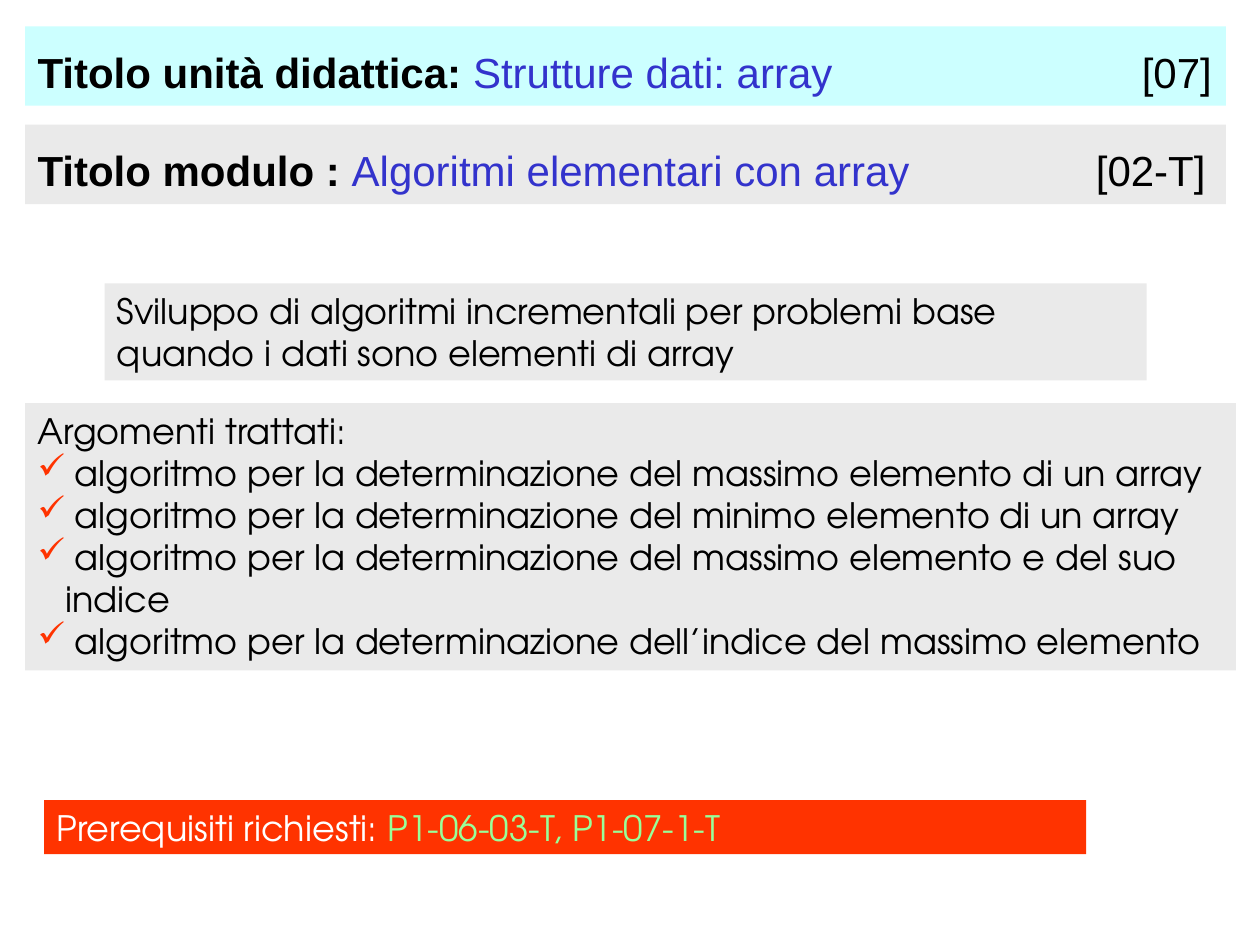
from dataclasses import dataclass

from lxml import etree
from pptx import Presentation
from pptx.dml.color import RGBColor
from pptx.enum import text
from pptx.oxml.ns import qn
from pptx.util import Inches, Pt

TITLE_FONT = "Arial"
BODY_FONT = "TeX Gyre Adventor"
BLACK, WHITE, BLUE = "000000", "FFFFFF", "3333CC"
GREY, CYAN, RED, GREEN = "EAEAEA", "CCFFFF", "FF3300", "99FF99"
BULLET_INDENT = Inches(0.22)


@dataclass
class Run:
    content: str
    color: str = BLACK
    size: float = 20
    font: str = BODY_FONT
    bold: bool = False


@dataclass
class Line:
    runs: list[Run]
    bullet: bool = False
    right_tab: float = 0


@dataclass
class Panel:
    left: float
    top: float
    width: float
    height: float
    fill: str
    lines: list[Line]


def rgb(color: str) -> RGBColor:
    return RGBColor.from_string(color)


def title_line(label: str, title: str, code: str, right_tab: float) -> Line:
    """Label and title at the left, code at a right tab; the tall tab sets the line height."""
    return Line([
        Run(label, BLACK, 24, TITLE_FONT, True),
        Run(title, BLUE, 24, TITLE_FONT),
        Run("\t", BLACK, 32, TITLE_FONT),
        Run(code, BLACK, 24, TITLE_FONT),
    ], right_tab=right_tab)


def add_right_tab(paragraph, position: float) -> None:
    tabs = etree.SubElement(paragraph._p.get_or_add_pPr(), qn("a:tabLst"))
    etree.SubElement(tabs, qn("a:tab"), pos=str(Inches(position)), algn="r")


def add_check_bullet(paragraph) -> None:
    properties = paragraph._p.get_or_add_pPr()
    properties.set("marL", str(BULLET_INDENT))
    properties.set("indent", str(-BULLET_INDENT))
    bullet_color = etree.SubElement(properties, qn("a:buClr"))
    etree.SubElement(bullet_color, qn("a:srgbClr"), val=RED)
    etree.SubElement(properties, qn("a:buChar"), char="✓")


def add_line(paragraph, line: Line) -> None:
    if line.right_tab:
        add_right_tab(paragraph, line.right_tab)
    if line.bullet:
        add_check_bullet(paragraph)
    for item in line.runs:
        run = paragraph.add_run()
        run.text = item.content
        run.font.name = item.font
        run.font.size = Pt(item.size)
        run.font.bold = item.bold
        run.font.color.rgb = rgb(item.color)


def add_panel(slide, panel: Panel) -> None:
    shape = slide.shapes.add_textbox(
        Inches(panel.left), Inches(panel.top), Inches(panel.width), Inches(panel.height))
    shape.fill.solid()
    shape.fill.fore_color.rgb = rgb(panel.fill)
    frame = shape.text_frame
    frame.word_wrap = True
    frame.auto_size = text.MSO_AUTO_SIZE.SHAPE_TO_FIT_TEXT
    for index, line in enumerate(panel.lines):
        paragraph = frame.add_paragraph() if index else frame.paragraphs[0]
        add_line(paragraph, line)


TOPICS = [
    "del massimo elemento di un array",
    "del minimo elemento di un array",
    "del massimo elemento e del suo indice",
    "dell’indice del massimo elemento",
]

PANELS = [
    Panel(0.2, 0.21, 9.53, 0.63, CYAN, [
        title_line("Titolo unità didattica: ", "Strutture dati: array", "[07]", 9.32)]),
    Panel(0.2, 0.99, 9.53, 0.63, GREY, [
        title_line("Titolo modulo : ", "Algoritmi elementari con array", "[02-T]", 9.27)]),
    Panel(0.83, 2.25, 8.27, 0.77, GREY, [
        Line([Run("Sviluppo di algoritmi incrementali per problemi base "
                  "quando i dati sono elementi di array")])]),
    Panel(0.2, 3.2, 9.61, 2.12, GREY, [
        Line([Run("Argomenti trattati:")]),
        *(Line([Run(f" algoritmo per la determinazione {topic}")], bullet=True)
          for topic in TOPICS)]),
    Panel(0.35, 6.35, 8.27, 0.43, RED, [
        Line([Run("Prerequisiti richiesti: ", WHITE), Run("P1-06-03-T, P1-07-1-T", GREEN)])]),
]


def main() -> None:
    presentation = Presentation()
    presentation.slide_width, presentation.slide_height = Inches(10), Inches(7.5)
    slide = presentation.slides.add_slide(presentation.slide_layouts[6])
    for panel in PANELS:
        add_panel(slide, panel)
    presentation.save("out.pptx")


if __name__ == "__main__":
    main()
